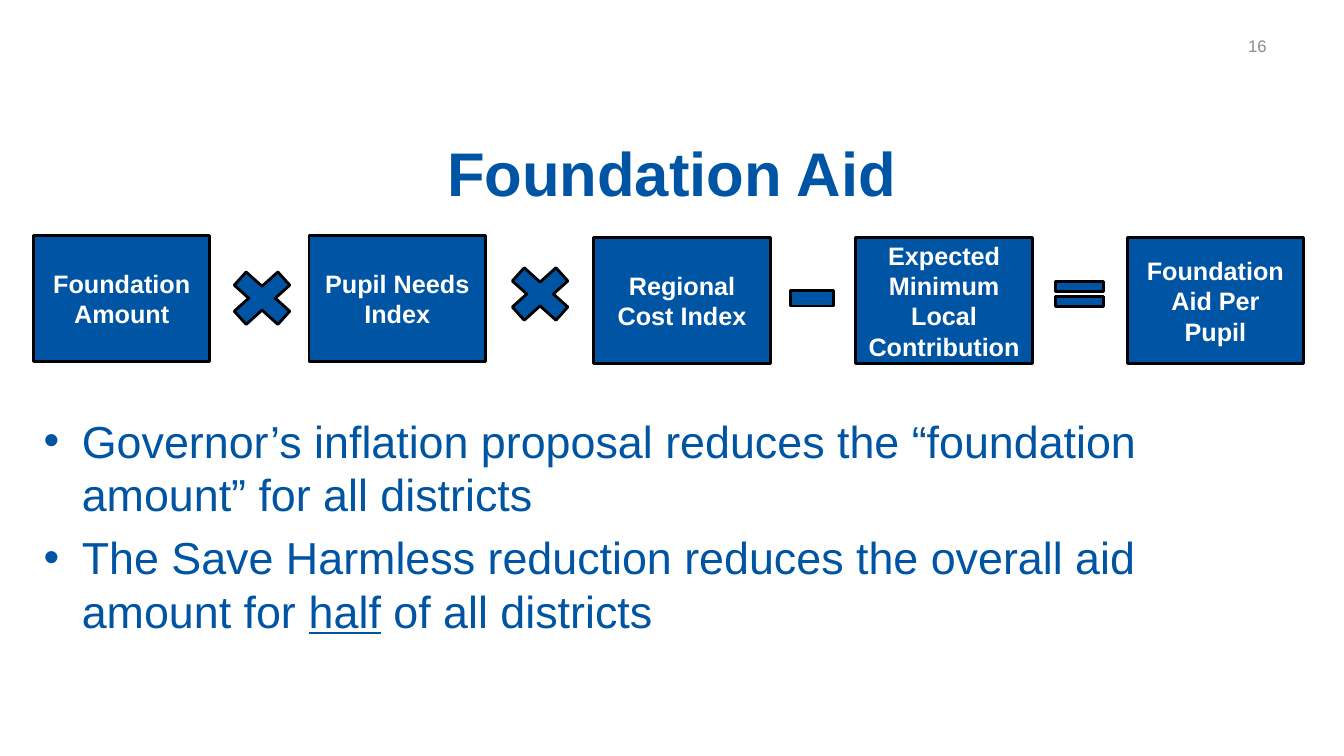
from lxml import etree
from pptx import Presentation
from pptx import util as u
from pptx.dml import color
from pptx.enum import shapes, text
from pptx.oxml import ns

COLORS = {"blue": "0054A4", "white": "FFFFFF", "black": "000000", "gray": "8C8C8C"}
FONT = "Arial"
COLUMNS, ROWS = 160, 90
BOX_WIDTH, BOX_HEIGHT = 21, 15
CENTER, RIGHT = text.PP_ALIGN.CENTER, text.PP_ALIGN.RIGHT
MATH = shapes.MSO_SHAPE

# left column, top row, label
FACTORS = [
    (4, 28, "Foundation Amount"),
    (36.8, 28, "Pupil Needs Index"),
    (70.7, 28.3, "Regional Cost Index"),
    (101.9, 28.3, "Expected Minimum Local Contribution"),
    (134.2, 28.3, "Foundation Aid Per Pupil"),
]
# left, top, width, height, sign
OPERATORS = [
    (26.2, 31, 10, 9, MATH.MATH_MULTIPLY),
    (59.3, 30.5, 10, 9, MATH.MATH_MULTIPLY),
    (93.2, 31.5, 7, 8, MATH.MATH_MINUS),
    (124.6, 32.5, 7.8, 5, MATH.MATH_EQUAL),
]
# each point is a list of (words, underlined)
POINTS = [
    [("Governor’s inflation proposal reduces the “foundation amount” for all districts", False)],
    [("The Save Harmless reduction reduces the overall aid amount for ", False),
     ("half", True), (" of all districts", False)],
]


class FormulaSlide:
    def __init__(self, deck):
        self.slide = deck.slides.add_slide(deck.slide_layouts[6])
        self.column = deck.slide_width / COLUMNS
        self.row = deck.slide_height / ROWS

    def place(self, left, top, width, height):
        """Turn grid columns and rows into slide lengths."""
        return (round(left * self.column), round(top * self.row),
                round(width * self.column), round(height * self.row))

    def style(self, font, size, shade, bold=False):
        font.name, font.size, font.bold = FONT, u.Pt(size), bold
        font.color.rgb = color.RGBColor.from_string(COLORS[shade])

    def frame(self, grid, anchor=text.MSO_ANCHOR.MIDDLE):
        frame = self.slide.shapes.add_textbox(*self.place(*grid)).text_frame
        frame.word_wrap = True
        frame.vertical_anchor = anchor
        return frame

    def label(self, frame, words, size, shade, align=CENTER, bold=False):
        frame.text = words
        line = frame.paragraphs[0]
        line.alignment = align
        self.style(line.runs[0].font, size, shade, bold)

    def block(self, kind, grid):
        block = self.slide.shapes.add_shape(kind, *self.place(*grid))
        block.shadow.inherit = False
        block.fill.solid()
        block.fill.fore_color.rgb = color.RGBColor.from_string(COLORS["blue"])
        block.line.color.rgb = color.RGBColor.from_string(COLORS["black"])
        block.line.width = u.Pt(2)
        return block

    def factor(self, left, top, words):
        frame = self.block(MATH.RECTANGLE, (left, top, BOX_WIDTH, BOX_HEIGHT)).text_frame
        frame.word_wrap = True
        frame.vertical_anchor = text.MSO_ANCHOR.MIDDLE
        self.label(frame, words, 18, "white", bold=True)

    def bullets(self, grid, points, size):
        frame = self.frame(grid, text.MSO_ANCHOR.TOP)
        for number, point in enumerate(points):
            line = frame.add_paragraph() if number else frame.paragraphs[0]
            if number:
                line.space_before = u.Pt(size * 0.2)
            props = line._p.get_or_add_pPr()
            props.set("marL", str(u.Inches(0.38)))
            props.set("indent", str(-u.Inches(0.38)))
            etree.SubElement(props, ns.qn("a:buFont"), typeface=FONT)
            etree.SubElement(props, ns.qn("a:buChar"), char="•")
            for words, underlined in point:
                run = line.add_run()
                run.text = words
                self.style(run.font, size, "blue")
                run.font.underline = underlined


def main():
    deck = Presentation()
    deck.slide_width, deck.slide_height = u.Inches(13.33), u.Inches(7.5)
    page = FormulaSlide(deck)
    page.label(page.frame((8, 13, 144, 15)), "Foundation Aid", 44, "blue", bold=True)
    page.label(page.frame((116, 3, 36, 4.8)), "16", 12, "gray", align=RIGHT)
    for factor in FACTORS:
        page.factor(*factor)
    for *grid, sign in OPERATORS:
        page.block(sign, grid)
    page.bullets((4, 48.6, 148, 39.5), POINTS, 32)
    deck.save("out.pptx")


if __name__ == "__main__":
    main()
